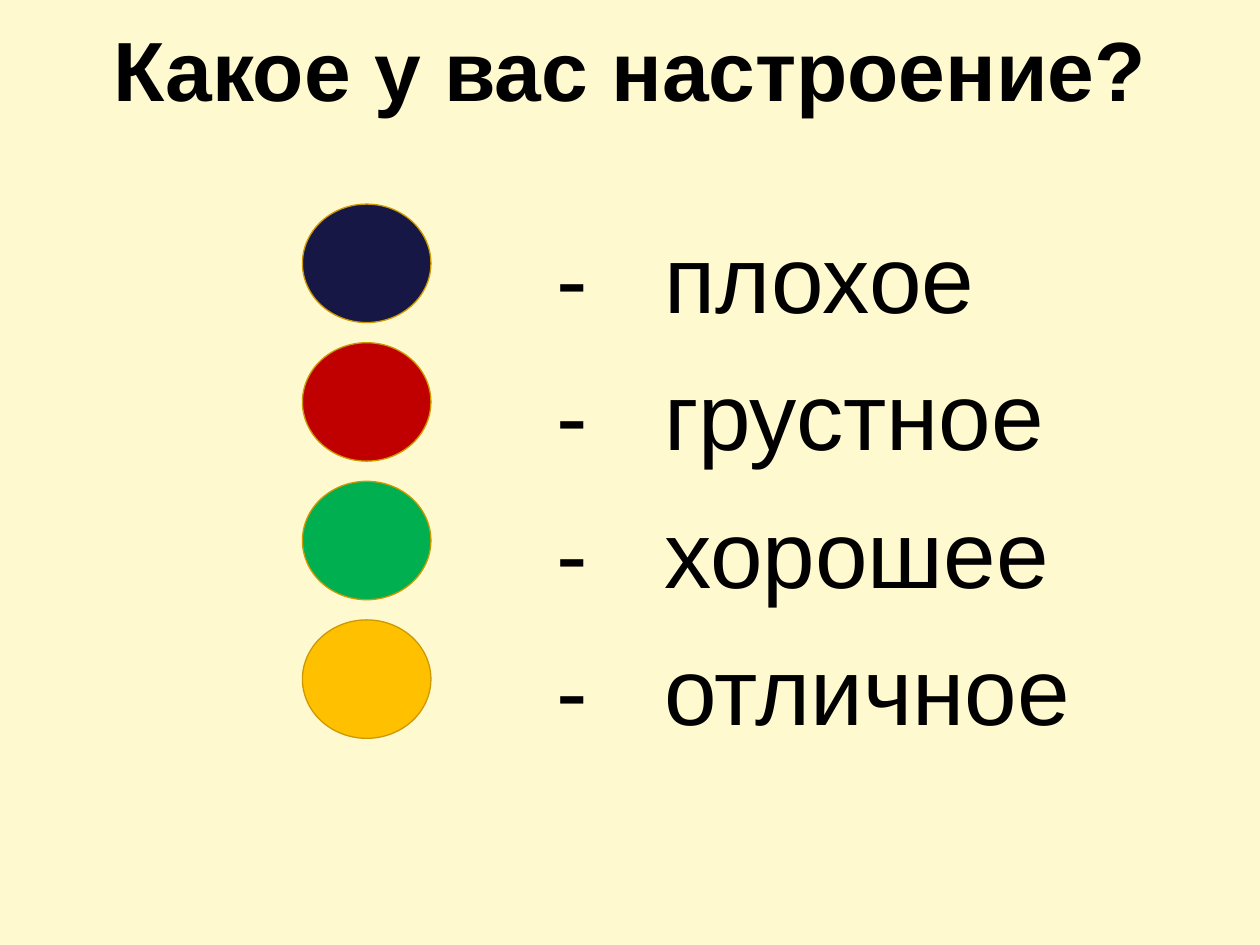
from pptx import Presentation
from pptx.dml.color import RGBColor
from pptx.enum.shapes import MSO_SHAPE as Shape
from pptx.enum.text import MSO_ANCHOR as Anchor, MSO_AUTO_SIZE as AutoSize, PP_ALIGN as Align
from pptx.util import Inches, Pt

MOODS = [
    ("плохое", "171745"),
    ("грустное", "C00000"),
    ("хорошее", "00B050"),
    ("отличное", "FFC000"),
]
TOP, PITCH = 1.62, 1.1


def rgb(color):
    return RGBColor.from_string(color)


def place(sp, left, top, width, height):
    sp.left, sp.top = Inches(left), Inches(top)
    sp.width, sp.height = Inches(width), Inches(height)


def add_run(p, text, size, bold=False):
    r = p.add_run()
    r.text = text
    r.font.name = "Arial"
    r.font.size = Pt(size)
    r.font.bold = bold
    r.font.color.rgb = rgb("000000")


def fill_title(sp, text):
    place(sp, 0, 0, 10, 1.23)
    tf = sp.text_frame
    tf.auto_size = AutoSize.NONE
    tf.vertical_anchor = Anchor.MIDDLE
    p = tf.paragraphs[0]
    p.alignment = Align.CENTER
    p.line_spacing = 0.8
    add_run(p, text, 48, bold=True)


def fill_mood_list(sp, words):
    place(sp, 0.59, TOP + 0.07, 9.07, 5.43)
    tf = sp.text_frame
    tf.auto_size = AutoSize.NONE
    tf.vertical_anchor = Anchor.TOP
    for i, word in enumerate(words):
        p = tf.add_paragraph() if i else tf.paragraphs[0]
        p.alignment = Align.LEFT
        p.space_before = Pt(13.6 if i else 0)
        # Hanging indent: the tab after the dash stops at the left margin
        pPr = p._p.get_or_add_pPr()
        pPr.set("marL", str(Inches(4.58)))
        pPr.set("indent", str(Inches(-0.85)))
        add_run(p, "-\t", 54)
        add_run(p, word, 54)


def add_mood_circle(slide, top, color):
    sp = slide.shapes.add_shape(Shape.FLOWCHART_CONNECTOR, Inches(2.4), Inches(top),
                                Inches(1.02), Inches(0.94))
    sp.shadow.inherit = False
    sp.fill.solid()
    sp.fill.fore_color.rgb = rgb(color)
    sp.line.color.rgb = rgb("CC9900")
    sp.line.width = Pt(0.75)


def main():
    prs = Presentation()
    prs.slide_width, prs.slide_height = Inches(10), Inches(7.5)
    slide = prs.slides.add_slide(prs.slide_layouts[0])
    slide.background.fill.solid()
    slide.background.fill.fore_color.rgb = rgb("FFF9CF")

    # Question and answers
    fill_title(slide.shapes.title, "Какое у вас настроение?")
    fill_mood_list(slide.placeholders[1], [word for word, _ in MOODS])

    # One coloured circle per mood
    for i, (_, color) in enumerate(MOODS):
        add_mood_circle(slide, TOP + i * PITCH, color)

    prs.save("out.pptx")


if __name__ == "__main__":
    main()
